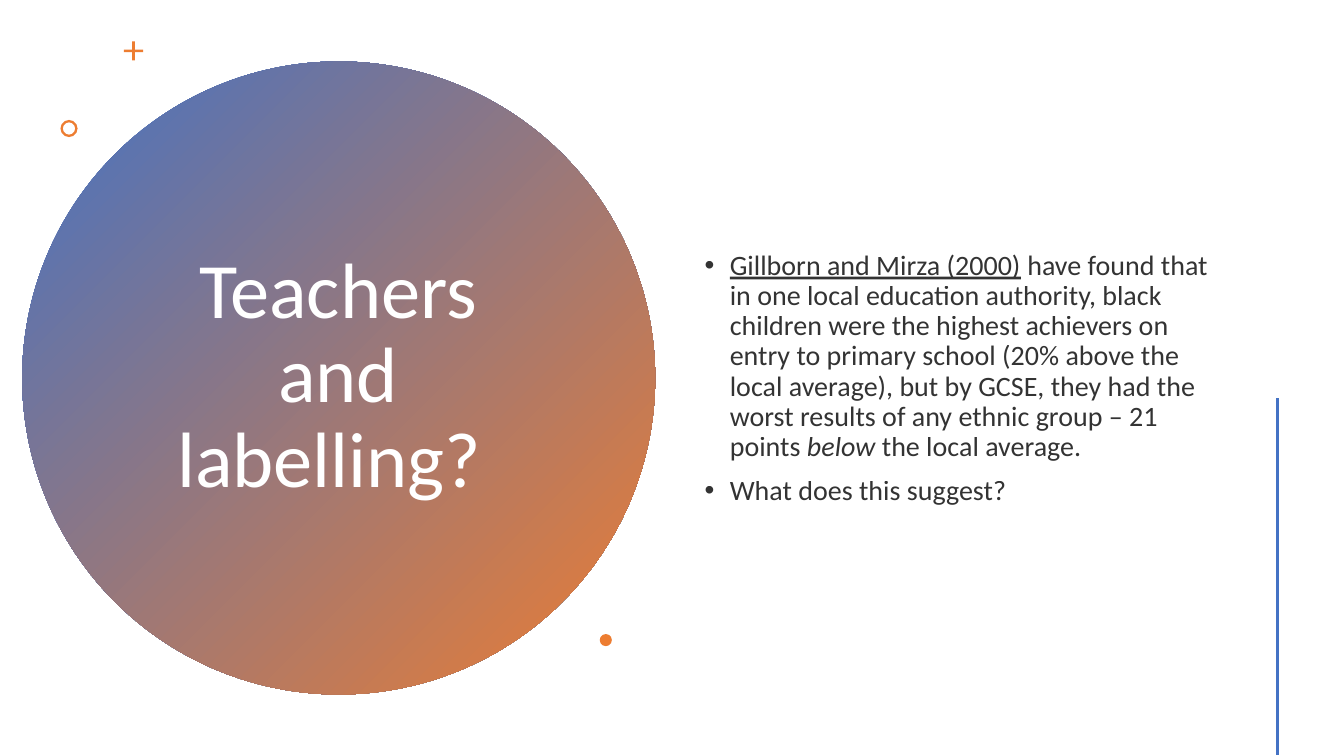
"""Build the slide on teachers and labelling."""
from dataclasses import dataclass

from lxml import etree
from pptx import Presentation
from pptx.dml.color import RGBColor
from pptx.enum.shapes import MSO_CONNECTOR, MSO_SHAPE
from pptx.enum.text import MSO_ANCHOR, MSO_AUTO_SIZE, PP_ALIGN
from pptx.oxml.ns import qn
from pptx.util import Pt

BLUE = RGBColor(0x44, 0x72, 0xC4)
ORANGE = RGBColor(0xED, 0x7D, 0x31)
WHITE = RGBColor(0xFF, 0xFF, 0xFF)
BLACK = RGBColor(0x00, 0x00, 0x00)
CIRCLE, CROSS, RING = MSO_SHAPE.OVAL, MSO_SHAPE.CROSS, MSO_SHAPE.DONUT
STRAIGHT = MSO_CONNECTOR.STRAIGHT
MIDDLE = MSO_ANCHOR.MIDDLE
FIXED_SIZE = MSO_AUTO_SIZE.NONE
CENTER, LEFT = PP_ALIGN.CENTER, PP_ALIGN.LEFT
FONT = "Calibri"
BULLET_INDENT = Pt(18)


@dataclass(frozen=True)
class Ornament:
    kind: MSO_SHAPE
    left: float
    top: float
    size: float
    adjustment: float | None = None


@dataclass(frozen=True)
class Phrase:
    text: str
    underline: bool | None = None
    italic: bool | None = None


TITLE_CIRCLE = Ornament(CIRCLE, 15.84, 43.92, 452.16)
ACCENTS = (
    Ornament(CROSS, 88.56, 29.52, 13.68, 0.43),
    Ornament(RING, 43.2, 85.68, 12.24, 0.14),
    Ornament(CIRCLE, 428.4, 452.88, 8.64),
)
FINDINGS = (
    (
        Phrase("Gillborn and Mirza (2000)", underline=True),
        Phrase(" have found that in one local education authority, black children "
               "were the highest achievers on entry to primary school (20% above the "
               "local average), but by GCSE, they had the worst results of any ethnic "
               "group – 21 points "),
        Phrase("below", italic=True),
        Phrase(" the local average."),
    ),
    (Phrase("What does this suggest?"),),
)


def add_ornament(slide, ornament: Ornament):
    """Draw one square ornament in orange without a line."""
    size = Pt(ornament.size)
    shape = slide.shapes.add_shape(
        ornament.kind, Pt(ornament.left), Pt(ornament.top), size, size)
    shape.shadow.inherit = False
    shape.line.fill.background()
    shape.fill.solid()
    shape.fill.fore_color.rgb = ORANGE
    if ornament.adjustment is not None:
        shape.adjustments[0] = ornament.adjustment
    return shape


def add_title_circle(slide) -> None:
    """Draw the gradient circle behind the title."""
    circle = add_ornament(slide, TITLE_CIRCLE)
    circle.fill.gradient()
    circle.fill.gradient_angle = 315
    for stop, position, color in zip(circle.fill.gradient_stops, (0, 1), (BLUE, ORANGE)):
        stop.position = position
        stop.color.rgb = color
    slide.shapes.element.insert(2, circle.element)


def place(placeholder, left: float, top: float, width: float, height: float):
    """Move a placeholder and return its text frame, centred vertically."""
    placeholder.left, placeholder.top = Pt(left), Pt(top)
    placeholder.width, placeholder.height = Pt(width), Pt(height)
    frame = placeholder.text_frame
    frame.word_wrap = True
    frame.auto_size = FIXED_SIZE
    frame.vertical_anchor = MIDDLE
    return frame


def format_paragraph(paragraph, size: float, color: RGBColor, alignment: PP_ALIGN) -> None:
    """Set the font, alignment and line spacing of a paragraph."""
    paragraph.alignment = alignment
    paragraph.line_spacing = 0.9
    paragraph.font.name = FONT
    paragraph.font.size = Pt(size)
    paragraph.font.color.rgb = color


def fill_title(slide) -> None:
    """Write the title over the circle."""
    frame = place(slide.shapes.title, 97.92, 101.52, 287.28, 336.24)
    frame.text = "Teachers and labelling? "
    format_paragraph(frame.paragraphs[0], 56, WHITE, CENTER)


def fill_findings(slide) -> None:
    """Write the bulleted findings."""
    frame = place(slide.placeholders[1], 496.08, 41.04, 375.84, 459.36)
    for index, phrases in enumerate(FINDINGS):
        paragraph = frame.add_paragraph() if index else frame.paragraphs[0]
        for phrase in phrases:
            run = paragraph.add_run()
            run.text = phrase.text
            run.font.underline = phrase.underline
            run.font.italic = phrase.italic
        format_paragraph(paragraph, 20, BLACK, LEFT)
        paragraph.space_before = Pt(10)
        properties = paragraph._p.get_or_add_pPr()
        properties.set("marL", str(BULLET_INDENT))
        properties.set("indent", str(-BULLET_INDENT))
        for color in properties.iter(qn("a:srgbClr")):
            etree.SubElement(color, qn("a:alpha"), val="80000")


def add_edge_line(slide) -> None:
    """Draw the vertical line at the lower right."""
    edge = slide.shapes.add_connector(
        STRAIGHT, Pt(912.24), Pt(284.4), Pt(912.24), Pt(539.28))
    edge.line.color.rgb = BLUE
    edge.line.width = Pt(2)
    etree.SubElement(edge.element.spPr, qn("a:effectLst"))


def main() -> None:
    """Build and save the presentation."""
    presentation = Presentation()
    presentation.slide_width, presentation.slide_height = Pt(960), Pt(540)
    slide = presentation.slides.add_slide(presentation.slide_layouts[1])
    add_title_circle(slide)
    fill_title(slide)
    fill_findings(slide)
    for accent in ACCENTS:
        add_ornament(slide, accent)
    add_edge_line(slide)
    presentation.save("out.pptx")


if __name__ == "__main__":
    main()
